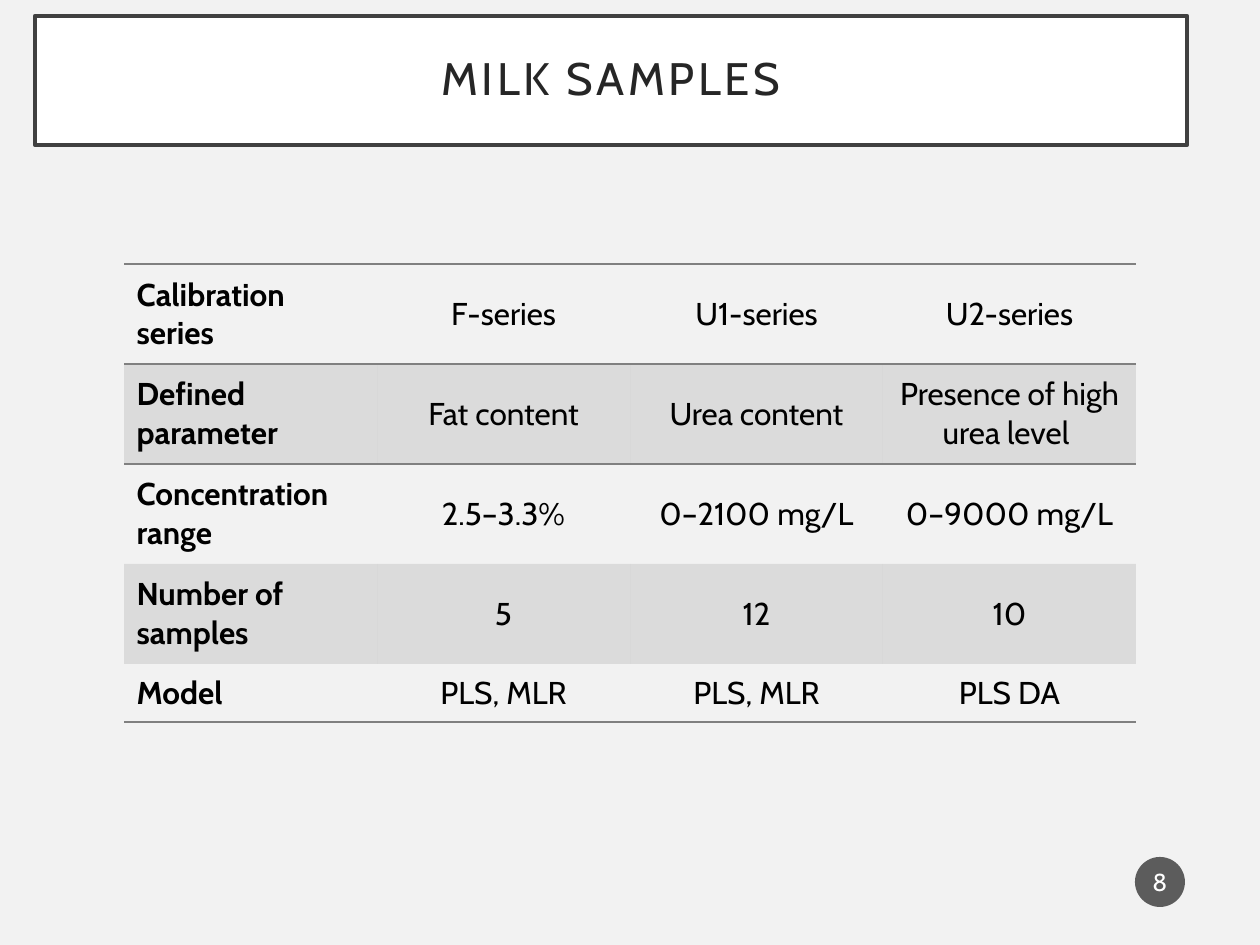
from lxml.etree import SubElement
from pptx import Presentation
from pptx.dml.color import RGBColor
from pptx.enum.shapes import MSO_SHAPE
from pptx.enum.text import MSO_ANCHOR, PP_ALIGN
from pptx.oxml import parse_xml
from pptx.oxml.ns import nsdecls, qn
from pptx.util import Emu, Pt

EMU_PER_PX = 914400 / 126
FONT = "Cabin"
BACKGROUND = RGBColor(0xF2, 0xF2, 0xF2)
WHITE = RGBColor(0xFF, 0xFF, 0xFF)
BLACK = RGBColor(0x00, 0x00, 0x00)
FRAME = RGBColor(0x40, 0x40, 0x40)
TITLE_TEXT = RGBColor(0x26, 0x26, 0x26)
BADGE = RGBColor(0x1D, 0x1D, 0x1D)
GRAY = RGBColor(0x80, 0x80, 0x80)
NO_STYLE_NO_GRID = "{2D5ABB26-0587-4C30-8999-92F81FD0307C}"

ROWS = [
    ["Calibration series", "F-series", "U1-series", "U2-series"],
    ["Defined parameter", "Fat content", "Urea content", "Presence of high urea level "],
    ["Concentration range", "2.5–3.3%", "0–2100 mg/L", "0–9000 mg/L"],
    ["Number of samples", "5", "12", "10"],
    ["Model", "PLS, MLR", "PLS, MLR", "PLS DA"],
]
ROW_HEIGHTS = [100, 100, 100, 100, 58]
COLUMN_WIDTH = 253
RULED_SIDES = {0: ["lnT", "lnB"], 1: ["lnT"], 4: ["lnB"]}


def px(length):
    """Turn a length in px into EMU."""
    return Emu(round(length * EMU_PER_PX))


def set_attributes(target, values):
    """Set every attribute named in a dict of format values."""
    for name, value in values.items():
        setattr(target, name, value)


def set_fill(fill, color, opacity=100):
    """Give a fill a solid colour with an opacity in percent."""
    fill.solid()
    fill.fore_color.rgb = color
    if opacity < 100:
        color_element = fill._xPr.find(qn("a:solidFill"))[0]
        SubElement(color_element, qn("a:alpha"), val=str(opacity * 1000))


def write_text(text_frame, text, size, color, alignment=PP_ALIGN.CENTER, bold=False):
    """Write one formatted line of text and return its paragraph and run."""
    paragraph = text_frame.paragraphs[0]
    paragraph.alignment = alignment
    run = paragraph.add_run()
    run.text = text
    set_attributes(run.font, {"name": FONT, "size": Pt(size), "bold": bold})
    run.font.color.rgb = color
    return paragraph, run


def add_panel(slide, kind, box, color, margins, opacity=100):
    """Add a filled shape without line or shadow, ready for centred text."""
    shape = slide.shapes.add_shape(kind, *map(px, box))
    shape.shadow.inherit = False
    set_fill(shape.fill, color, opacity)
    shape.line.fill.background()
    horizontal, vertical = map(px, margins)
    set_attributes(shape.text_frame, {
        "word_wrap": True,
        "vertical_anchor": MSO_ANCHOR.MIDDLE,
        "margin_left": horizontal,
        "margin_right": horizontal,
        "margin_top": vertical,
        "margin_bottom": vertical,
    })
    return shape


def add_title(slide, text):
    """Add the framed title with spaced letters."""
    shape = add_panel(slide, MSO_SHAPE.RECTANGLE, (35, 16, 1152, 129), WHITE, (25, 25))
    set_fill(shape.line.fill, FRAME)
    shape.line.width = Pt(2.5)
    paragraph, run = write_text(shape.text_frame, text, 26, TITLE_TEXT)
    paragraph.line_spacing = 0.9
    run.font._element.set("spc", "200")


def add_page_number(slide, text):
    """Add the round page number badge."""
    shape = add_panel(slide, MSO_SHAPE.OVAL, (1135, 857, 50, 50), BADGE, (2, 6), 70)
    write_text(shape.text_frame, text, 14, WHITE)


def add_border(cell, side):
    """Draw a gray rule on one side of a table cell."""
    properties = cell._tc.get_or_add_tcPr()
    properties.append(parse_xml(
        f'<a:{side} {nsdecls("a")} w="{Pt(1)}"><a:solidFill>'
        f'<a:srgbClr val="{GRAY}"/></a:solidFill></a:{side}>'
    ))


def add_sample_table(slide):
    """Add the table of samples with bold row heads and banded rows."""
    width = COLUMN_WIDTH * len(ROWS[0])
    frame = slide.shapes.add_table(
        len(ROWS), len(ROWS[0]), px(124), px(264), px(width), px(sum(ROW_HEIGHTS)))
    table = frame.table
    set_attributes(table, {"first_row": False, "horz_banding": False})
    table._tbl.tblPr.find(qn("a:tableStyleId")).text = NO_STYLE_NO_GRID
    for column in table.columns:
        column.width = px(COLUMN_WIDTH)
    for row_index, texts in enumerate(ROWS):
        table.rows[row_index].height = px(ROW_HEIGHTS[row_index])
        for column_index, text in enumerate(texts):
            cell = table.cell(row_index, column_index)
            cell.vertical_anchor = MSO_ANCHOR.MIDDLE
            for side in RULED_SIDES.get(row_index, []):
                add_border(cell, side)
            if row_index % 2:
                set_fill(cell.fill, GRAY, 20)
            else:
                cell.fill.background()
            is_head = column_index == 0
            alignment = PP_ALIGN.LEFT if is_head else PP_ALIGN.CENTER
            write_text(cell.text_frame, text, 18, BLACK, alignment, is_head)


def main():
    """Build the slide and save it."""
    presentation = Presentation()
    set_attributes(presentation, {"slide_width": px(1260), "slide_height": px(945)})
    slide = presentation.slides.add_slide(presentation.slide_layouts[6])
    set_fill(slide.background.fill, BACKGROUND)
    add_title(slide, "MILK SAMPLES")
    add_page_number(slide, "8")
    add_sample_table(slide)
    presentation.save("out.pptx")


if __name__ == "__main__":
    main()
